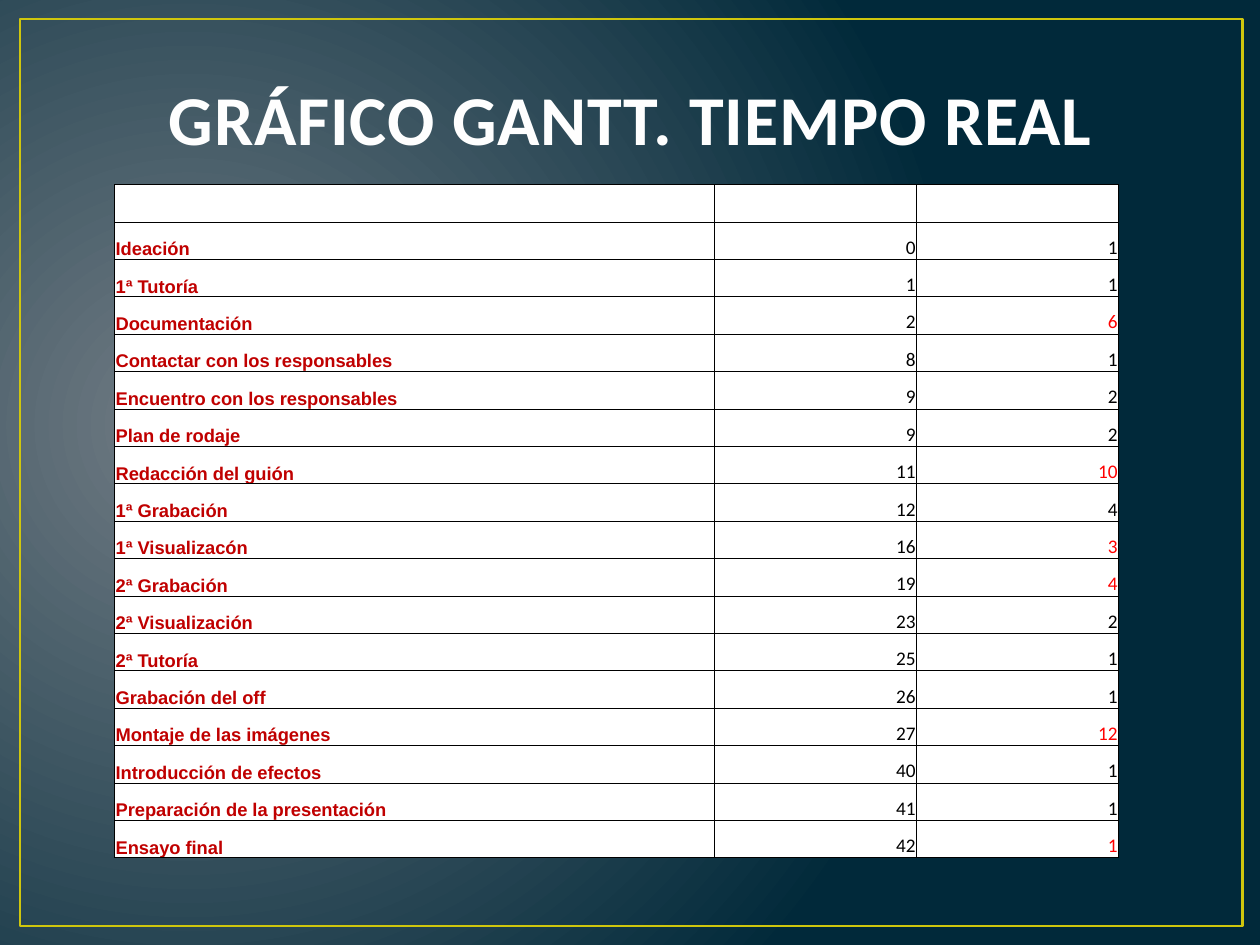
from pptx import Presentation
from pptx.dml.color import RGBColor
from pptx.enum.shapes import MSO_SHAPE
from pptx.enum.text import MSO_ANCHOR, PP_ALIGN
from pptx.oxml import parse_xml
from pptx.oxml.ns import nsdecls
from pptx.util import Pt

COLORS = {
    "glow": "717C84", "night": "01293A", "frame": "CFC60D", "title": "FEFEFE",
    "cell": "FFFFFF", "border": "000000", "task": "C00000", "number": "000000",
    "late": "FF0000",
}

TASKS = [
    ("Ideación", 0, 1, False),
    ("1ª Tutoría", 1, 1, False),
    ("Documentación", 2, 6, True),
    ("Contactar con los responsables", 8, 1, False),
    ("Encuentro con los responsables", 9, 2, False),
    ("Plan de rodaje", 9, 2, False),
    ("Redacción del guión", 11, 10, True),
    ("1ª Grabación", 12, 4, False),
    ("1ª Visualizacón", 16, 3, True),
    ("2ª Grabación", 19, 4, True),
    ("2ª Visualización", 23, 2, False),
    ("2ª Tutoría", 25, 1, False),
    ("Grabación del off", 26, 1, False),
    ("Montaje de las imágenes", 27, 12, True),
    ("Introducción de efectos", 40, 1, False),
    ("Preparación de la presentación", 41, 1, False),
    ("Ensayo final", 42, 1, True),
]


class GanttSlide:
    """Hold the style and the current slide, and draw each kind of element."""

    def __init__(self, prs):
        self.s = prs.slides.add_slide(prs.slide_layouts[5])

    def color(self, name):
        return RGBColor.from_string(COLORS[name])

    def background(self):
        fill = self.s.background.fill
        fill.gradient()
        for stop, name in zip(fill.gradient_stops, ("glow", "night")):
            stop.color.rgb = self.color(name)
        grad = self.s.element.xpath(".//p:bgPr/a:gradFill")[0]
        for lin in grad.xpath("a:lin"):
            grad.remove(lin)
        grad.xpath("a:gsLst")[0].addnext(parse_xml(
            f'<a:path {nsdecls("a")} path="circle">'
            '<a:fillToRect l="15000" t="50000" r="85000" b="60000"/></a:path>'))

    def frame(self, x, y, w, h):
        sp = self.s.shapes.add_shape(
            MSO_SHAPE.RECTANGLE, Pt(x), Pt(y), Pt(w), Pt(h))
        sp.shadow.inherit = False
        sp.fill.background()
        sp.line.color.rgb = self.color("frame")
        sp.line.width = Pt(1.5)

    def run(self, p, text, font, size, color, bold=False):
        r = p.add_run()
        r.text = text
        r.font.name = font
        r.font.size = Pt(size)
        r.font.bold = bold
        r.font.color.rgb = self.color(color)
        return r

    def title(self, text, x, y, w, h):
        sp = self.s.shapes.title
        sp.left, sp.top, sp.width, sp.height = Pt(x), Pt(y), Pt(w), Pt(h)
        tf = sp.text_frame
        tf.vertical_anchor = MSO_ANCHOR.BOTTOM
        p = tf.paragraphs[0]
        p.alignment = PP_ALIGN.CENTER
        r = self.run(p, text, "Calibri", 40, "title", True)
        r.font._element.set("spc", "50")

    def cell(self, cell):
        cell.fill.solid()
        cell.fill.fore_color.rgb = self.color("cell")
        cell.vertical_anchor = MSO_ANCHOR.BOTTOM
        cell.margin_left = cell.margin_right = cell.margin_top = Pt(0.6)
        cell.margin_bottom = 0
        tcPr = cell._tc.get_or_add_tcPr()
        for i, side in enumerate("LRTB"):
            tcPr.insert(i, parse_xml(
                f'<a:ln{side} {nsdecls("a")} w="{Pt(0.5)}"><a:solidFill>'
                f'<a:srgbClr val="{COLORS["border"]}"/></a:solidFill></a:ln{side}>'))
        p = cell.text_frame.paragraphs[0]
        p._p.get_or_add_endParaRPr().set("sz", "1100")
        return p

    def table(self, tasks, x, y, widths, row_h):
        n = len(tasks) + 1
        tbl = self.s.shapes.add_table(
            n, len(widths), Pt(x), Pt(y), Pt(sum(widths)), Pt(n * row_h)).table
        tbl.first_row = tbl.horz_banding = False
        for col, w in zip(tbl.columns, widths):
            col.width = Pt(w)
        for row in tbl.rows:
            row.height = Pt(row_h)
        paragraphs = [[self.cell(c) for c in row.cells] for row in tbl.rows]
        for (name, start, days, late), (task, *numbers) in zip(tasks, paragraphs[1:]):
            self.run(task, name, "Arial", 10.5, "task", True)
            for p, value, color in zip(
                    numbers, (start, days), ("number", "late" if late else "number")):
                p.alignment = PP_ALIGN.RIGHT
                self.run(p, str(value), "Calibri", 11, color)


def main():
    prs = Presentation()
    prs.slide_width, prs.slide_height = Pt(720), Pt(540)
    slide = GanttSlide(prs)
    slide.background()
    slide.frame(11.5, 10.8, 698.4, 518.4)
    slide.title("GRÁFICO GANTT. TIEMPO REAL", 36.5, 21, 648, 74)
    slide.table(TASKS, 65.5, 105.5, (342.8, 115.5, 115.5), 21.4)
    prs.save("out.pptx")


if __name__ == "__main__":
    main()
